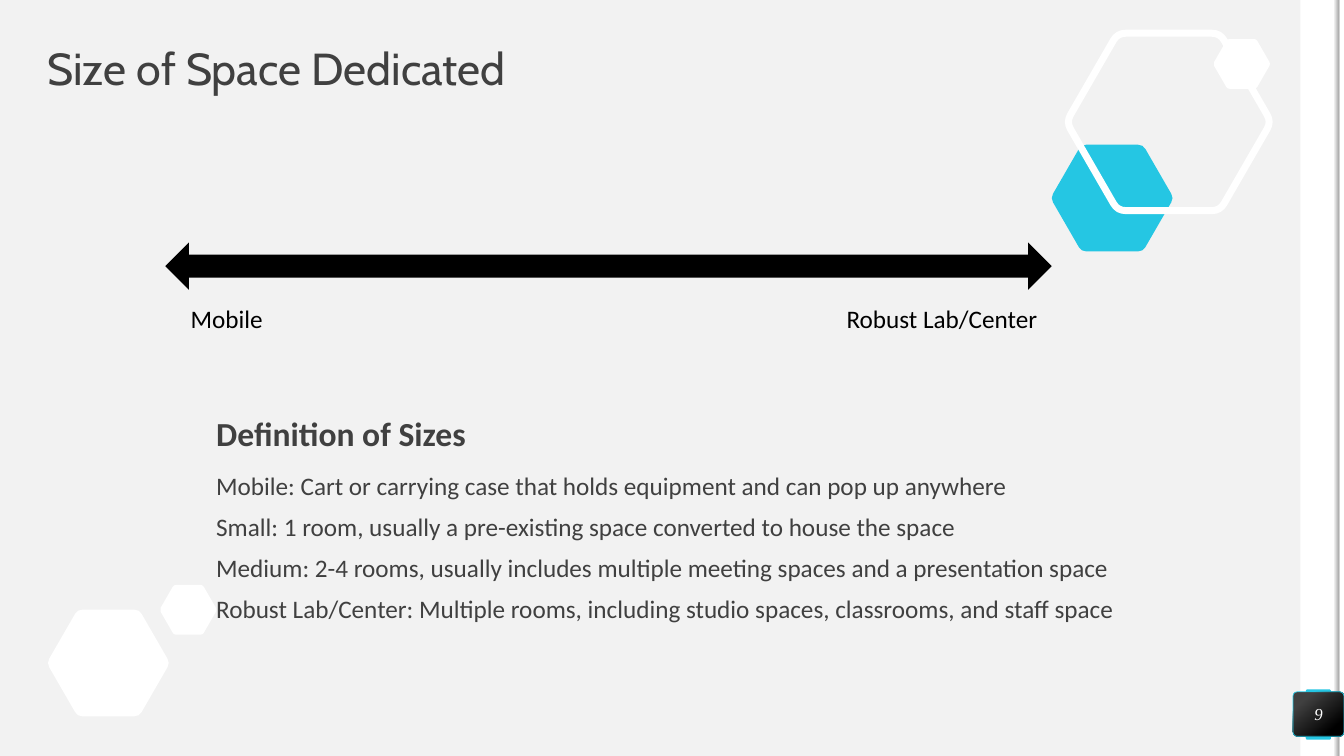
from math import cos, radians, sin, sqrt

from lxml.etree import SubElement
from pptx import Presentation
from pptx.dml.color import RGBColor
from pptx.enum.shapes import MSO_SHAPE as Preset
from pptx.enum.text import MSO_ANCHOR as Anchor, PP_ALIGN as Align
from pptx.oxml.ns import qn
from pptx.util import Pt

PAPER = RGBColor(0xF2, 0xF2, 0xF2)
WHITE = RGBColor(0xFF, 0xFF, 0xFF)
BLACK = RGBColor(0x00, 0x00, 0x00)
CYAN = RGBColor(0x25, 0xC6, 0xE3)
CHARCOAL = RGBColor(0x40, 0x40, 0x40)
GREY = RGBColor(0xA6, 0xA6, 0xA6)

CORNER_CUT = 0.08  # rounded part of a hexagon side, at each end

DEFINITIONS = [
    "Mobile: Cart or carrying case that holds equipment and can pop up anywhere",
    "Small: 1 room, usually a pre-existing space converted to house the space",
    "Medium: 2-4 rooms, usually includes multiple meeting spaces and a presentation space",
    "Robust Lab/Center: Multiple rooms, including studio spaces, classrooms, and staff space",
]


def paint(shape, fill=None, line=None, line_width=1.0):
    shape.shadow.inherit = False
    if fill is None:
        shape.fill.background()
    else:
        shape.fill.solid()
        shape.fill.fore_color.rgb = fill
    if line is None:
        shape.line.fill.background()
    else:
        shape.line.color.rgb = line
        shape.line.width = Pt(line_width)


def paint_gradient(shape, stops, angle):
    shape.fill.gradient()
    shape.fill.gradient_angle = angle
    for stop, (position, color) in zip(shape.fill.gradient_stops, stops):
        stop.position = position
        stop.color.rgb = color


def sharpen_corners(shape):
    outline = next(shape.element.iter(qn("a:ln")))
    SubElement(outline, qn("a:miter"), lim="800000")


def add_preset(slide, preset, box, adjustment=None, **colors):
    shape = slide.shapes.add_shape(preset, *map(Pt, box))
    if adjustment is not None:
        shape.adjustments[0] = adjustment
    paint(shape, **colors)
    return shape


def add_hexagon(slide, center_x, center_y, height, **colors):
    """Flat-topped hexagon; each corner is one Bezier curve."""
    side = height / sqrt(3)
    corners = [(center_x + side * cos(radians(60 * i)),
                center_y + side * sin(radians(60 * i))) for i in range(6)]
    points = []
    for i, corner in enumerate(corners):
        for neighbour, cuts in ((corners[i - 1], (CORNER_CUT, CORNER_CUT / 3)),
                                (corners[(i + 1) % 6], (CORNER_CUT / 3, CORNER_CUT))):
            points += [tuple(Pt(c + cut * (n - c)) for c, n in zip(corner, neighbour))
                       for cut in cuts]
    builder = slide.shapes.build_freeform(*points[0])
    builder.add_line_segments(points[1:], close=True)
    shape = builder.convert_to_shape()
    paint(shape, **colors)

    # Of every four segments, the first three hold a corner's curve points
    segments = list(shape.element.iter(qn("a:lnTo")))
    for start in range(0, len(segments), 4):
        curve, *others = segments[start:start + 3]
        curve.tag = qn("a:cubicBezTo")
        for segment in others:
            curve.append(segment[0])
            segment.getparent().remove(segment)


def write(shape, lines, size, font="Calibri", color=CHARCOAL, bold=False,
          italic=False, align=Align.LEFT, anchor=Anchor.TOP, inset=(0, 0),
          line_spacing=None, space_before=0):
    frame = shape.text_frame
    frame.word_wrap = True
    frame.vertical_anchor = anchor
    frame.margin_left = frame.margin_right = Pt(inset[0])
    frame.margin_top = frame.margin_bottom = Pt(inset[1])
    for i, line in enumerate(lines):
        paragraph = frame.add_paragraph() if i else frame.paragraphs[0]
        paragraph.alignment = align
        paragraph.line_spacing = line_spacing
        paragraph.space_before = Pt(space_before if i else 0)
        run = paragraph.add_run()
        run.text = line
        run.font.name = font
        run.font.size = Pt(size)
        run.font.bold = bold
        run.font.italic = italic
        run.font.color.rgb = color


def add_text(slide, box, lines, size, **text_format):
    write(slide.shapes.add_textbox(*map(Pt, box)), lines, size, **text_format)


def main():
    presentation = Presentation()
    presentation.slide_width, presentation.slide_height = Pt(960), Pt(540)
    slide = presentation.slides.add_slide(presentation.slide_layouts[6])
    slide.background.fill.solid()
    slide.background.fill.fore_color.rgb = PAPER

    # Right-hand band and its edge
    add_preset(slide, Preset.RECTANGLE, (928.8, 0, 28, 540), fill=WHITE)
    add_preset(slide, Preset.ROUNDED_RECTANGLE, (932.7, 492.4, 18, 36), 0.074, fill=CYAN)
    add_preset(slide, Preset.RECTANGLE, (956.6, 0, 3.4, 540), fill=WHITE)
    edge = add_preset(slide, Preset.RECTANGLE, (953, 0, 3.6, 540))
    paint_gradient(edge, [(0, PAPER), (1, GREY)], 0)

    # Hexagon decoration
    add_hexagon(slide, 77.4, 473.6, 76.2, fill=WHITE)
    add_hexagon(slide, 794.4, 141.5, 76.2, fill=CYAN)
    add_hexagon(slide, 834.9, 87.1, 126.7, line=WHITE, line_width=5)
    add_hexagon(slide, 134.5, 435.6, 35.6, fill=WHITE)
    add_hexagon(slide, 887, 45.7, 35.6, fill=WHITE)

    # Title and definitions
    add_text(slide, (34, 34, 893, 34), ["Size of Space Dedicated"], 32,
             font="Cabin", anchor=Anchor.MIDDLE, line_spacing=0.9)
    add_text(slide, (154.4, 298, 430.6, 28), ["Definition of Sizes"], 24,
             bold=True, line_spacing=0.9)
    add_text(slide, (154.4, 338.1, 642.4, 148.4), DEFINITIONS, 18,
             line_spacing=0.9, space_before=10)

    # Slide number
    badge = add_preset(slide, Preset.ROUNDED_RECTANGLE, (923.6, 494.2, 36.4, 31.8),
                       0.095, line=CYAN, line_width=0.5)
    paint_gradient(badge, [(0.2, CHARCOAL), (0.82, BLACK)], 310)
    write(badge, ["9"], 12, font="Times New Roman", color=WHITE, italic=True,
          align=Align.CENTER, anchor=Anchor.MIDDLE)

    # Size scale
    scale = add_preset(slide, Preset.LEFT_RIGHT_ARROW, (119.2, 175, 631, 30.2),
                       fill=BLACK, line=BLACK, line_width=1.5)
    sharpen_corners(scale)
    for left, label in [(45.6, "Mobile"), (556.5, "Robust Lab/Center")]:
        add_text(slide, (left, 213.1, 232.6, 29), [label], 18, color=BLACK,
                 align=Align.CENTER, inset=(7.2, 3.6))

    presentation.save("out.pptx")


if __name__ == "__main__":
    main()
